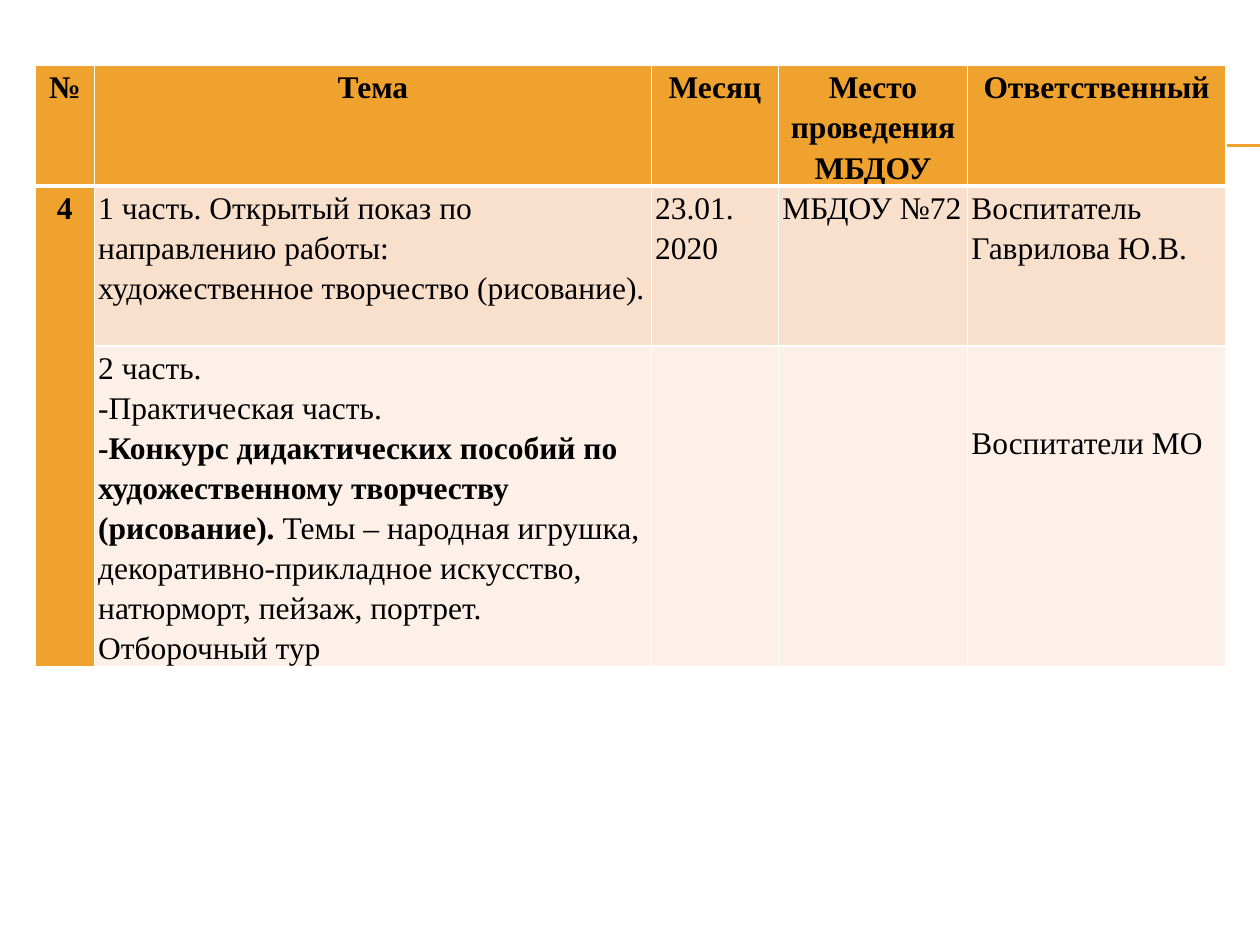
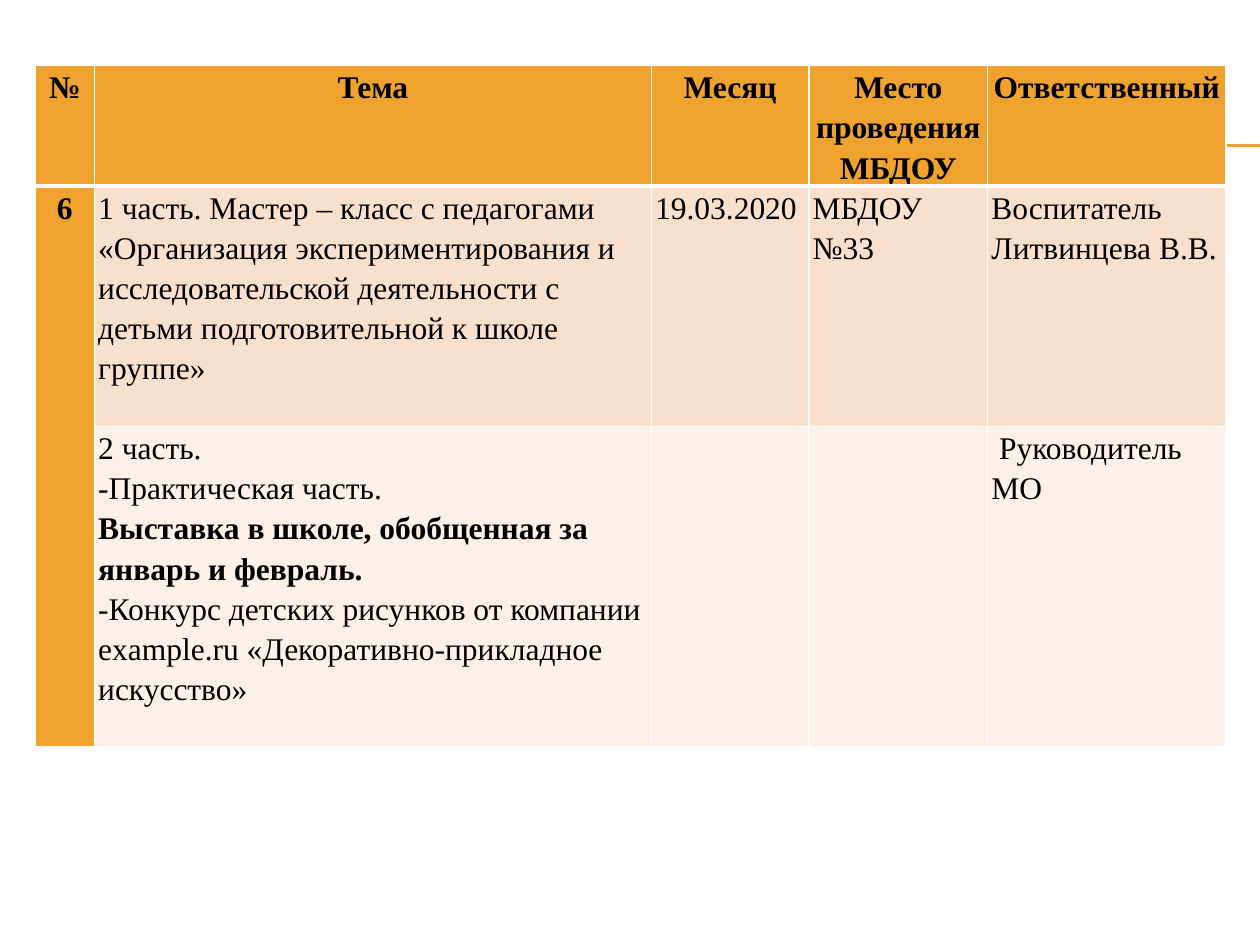
from lxml.etree import SubElement
from pptx import Presentation
from pptx.dml.color import RGBColor
from pptx.enum.shapes import MSO_CONNECTOR
from pptx.enum.text import PP_ALIGN
from pptx.oxml.ns import qn
from pptx.util import Inches, Pt

ORANGE, PEACH, CREAM = "F0A22E", "F9E0CD", "FCF0E8"
WHITE, BLACK = "FFFFFF", "000000"
HEADERS = ["№", "Тема", "Месяц", "Место проведения МБДОУ", "Ответственный"]


def color(hex_string):
    return RGBColor.from_string(hex_string)


class Deck:
    font_name = "Times New Roman"
    font_size = Pt(18)
    line_spacing = 1.15
    side_margin = Inches(0.03)
    row_fills = [ORANGE, PEACH, CREAM]

    def __init__(self):
        self.presentation = Presentation()
        self.presentation.slide_width = Inches(10)
        self.presentation.slide_height = Inches(7.5)
        self.slide = None

    def add_slide(self):
        """Start a slide with the double rule of the theme."""
        self.slide = self.presentation.slides.add_slide(self.presentation.slide_layouts[6])
        for top in (1.15, 1.16):
            self.add_rule(0.56, 10, top)

    def add_rule(self, left, right, top):
        rule = self.slide.shapes.add_connector(
            MSO_CONNECTOR.STRAIGHT, Inches(left), Inches(top), Inches(right), Inches(top))
        rule.line.color.rgb = color(ORANGE)
        rule.line.width = Pt(0.75)
        SubElement(rule._element.spPr, qn("a:effectLst"))

    def add_plan(self, number, column_widths, row_heights, first_part, second_part):
        """Add the plan table: header row, then two parts of one meeting."""
        rows = [HEADERS, [number, *first_part], ["", *second_part]]
        frame = self.slide.shapes.add_table(
            len(rows), len(HEADERS), Inches(0.28), Inches(0.52),
            Inches(sum(column_widths)), Inches(sum(row_heights)))
        table = frame.table
        for column, width in zip(table.columns, column_widths):
            column.width = Inches(width)
        for row, height in zip(table.rows, row_heights):
            row.height = Inches(height)
        for row_index, contents in enumerate(rows):
            for column_index, content in enumerate(contents):
                cell = table.cell(row_index, column_index)
                is_heading = row_index == 0 or column_index == 0
                self.style_cell(cell, row_index, is_heading)
                self.write_cell(cell, content, is_heading)
        table.cell(1, 0).merge(table.cell(2, 0))
        return table

    def style_cell(self, cell, row_index, is_heading):
        cell.margin_left = cell.margin_right = self.side_margin
        cell.margin_top = cell.margin_bottom = 0
        # Borders come before the fill in the cell properties
        heavy_edge = {0: "lnB", 1: "lnT"}.get(row_index)
        properties = cell._tc.get_or_add_tcPr()
        for edge in ("lnL", "lnR", "lnT", "lnB"):
            width = Pt(3 if edge == heavy_edge else 1)
            border = SubElement(properties, qn(f"a:{edge}"), w=str(width))
            SubElement(SubElement(border, qn("a:solidFill")), qn("a:srgbClr"), val=WHITE)
        cell.fill.solid()
        cell.fill.fore_color.rgb = color(ORANGE if is_heading else self.row_fills[row_index])

    def write_cell(self, cell, content, is_heading):
        """Write a string or a list of paragraphs, each a list of (text, bold)."""
        if not content:
            return
        if isinstance(content, str):
            content = [[(content, is_heading)]]
        for index, pieces in enumerate(content):
            text_frame = cell.text_frame
            paragraph = text_frame.add_paragraph() if index else text_frame.paragraphs[0]
            paragraph.line_spacing = self.line_spacing
            paragraph.alignment = PP_ALIGN.CENTER if is_heading else PP_ALIGN.LEFT
            for text, bold in pieces:
                run = paragraph.add_run()
                run.text = text
                run.font.name = self.font_name
                run.font.size = self.font_size
                run.font.bold = bold
                run.font.color.rgb = color(BLACK)


def build_january(deck):
    deck.add_slide()
    topic = [[("1 часть. Открытый показ по направлению работы:", False)],
             [("художественное творчество (рисование).", False)]]
    date = [[("23.01.", False)], [("2020", False)]]
    practice = [
        [("2 часть.", False)],
        [("-Практическая часть.", False)],
        [("-Конкурс дидактических пособий по художественному творчеству (рисование). ", True),
         ("Темы – народная игрушка, декоративно-прикладное искусство, натюрморт, "
          "пейзаж, портрет. Отборочный тур", False)],
    ]
    table = deck.add_plan(
        "4", [0.47, 4.42, 1.01, 1.5, 2.05], [0.95, 1.27, 2.54],
        [topic, date, "МБДОУ №72", "Воспитатель Гаврилова Ю.В."],
        [practice, "", "", "Воспитатели МО"])
    # The person in charge stands beside the contest
    table.cell(2, 4).margin_top = Inches(0.6)


def build_march(deck):
    deck.add_slide()
    topic = ("1 часть. Мастер – класс с педагогами «Организация экспериментирования и "
             "исследовательской деятельности с детьми подготовительной к школе группе»")
    practice = [
        [("2 часть.", False)],
        [("-Практическая часть.", False)],
        [("Выставка в школе, обобщенная за январь и февраль.", True)],
        [("-Конкурс детских рисунков от компании example.ru "
          "«Декоративно-прикладное искусство»", False)],
    ]
    table = deck.add_plan(
        "6", [0.47, 4.42, 1.25, 1.42, 1.89], [0.95, 1.91, 2.54],
        [topic, "19.03.2020", "МБДОУ №33", "Воспитатель Литвинцева В.В."],
        [practice, "", "", "Руководитель МО"])
    # First-line indent of the person in charge
    paragraph = table.cell(2, 4).text_frame.paragraphs[0]
    paragraph._p.get_or_add_pPr().set("indent", str(Inches(0.06)))


def main():
    deck = Deck()
    build_january(deck)
    build_march(deck)
    deck.presentation.save("out.pptx")


if __name__ == "__main__":
    main()
